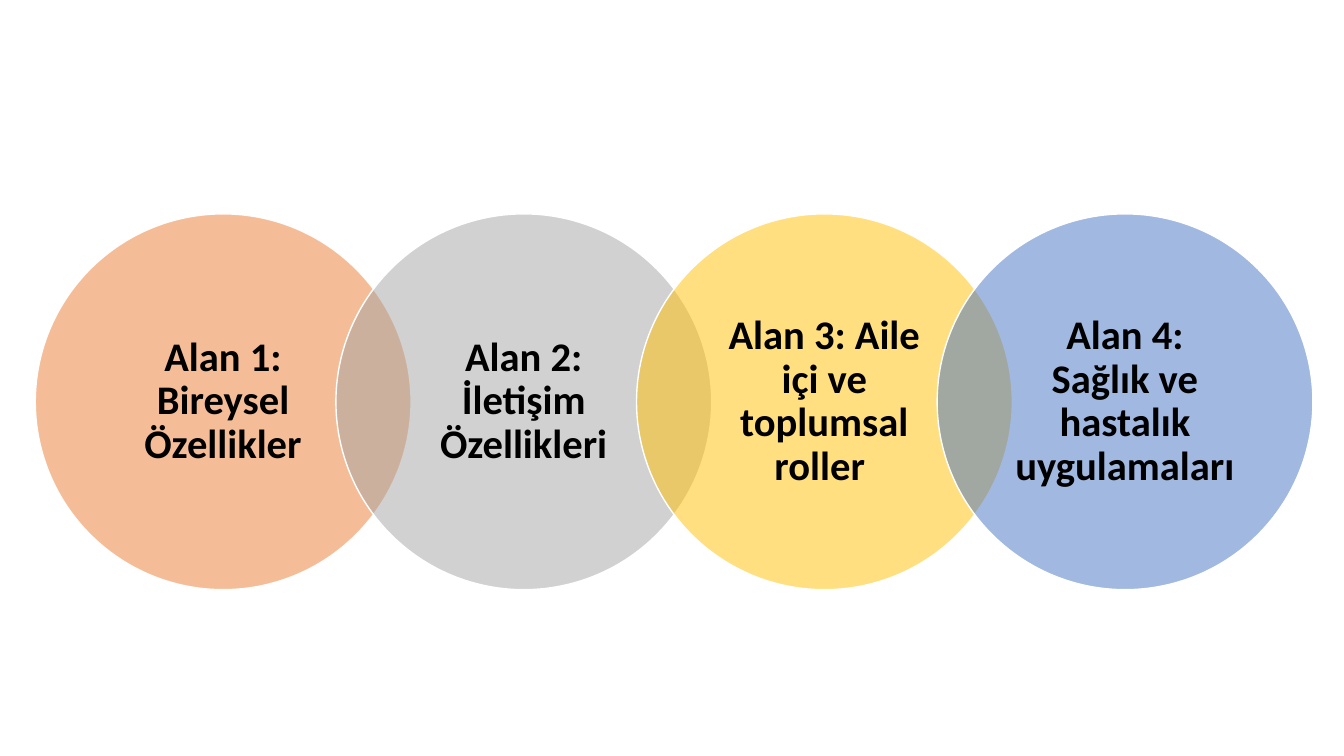
from dataclasses import dataclass

from lxml.etree import SubElement
from pptx import Presentation
from pptx.dml.color import RGBColor as Rgb
from pptx.enum.shapes import MSO_SHAPE as Shape
from pptx.enum.text import MSO_ANCHOR as Anchor, PP_ALIGN as Align
from pptx.oxml.ns import qn
from pptx.util import Cm, Pt

AREAS = [
    ("Alan 1: Bireysel Özellikler", "ED7D31"),
    ("Alan 2: İletişim Özellikleri", "A5A5A5"),
    ("Alan 3: Aile içi ve toplumsal roller ", "FFC000"),
    ("Alan 4: Sağlık ve hastalık uygulamaları ", "4472C4"),
]


@dataclass(frozen=True)
class Theme:
    font: str = "Calibri"
    size: int = 29
    text: str = "000000"
    outline: str = "FFFFFF"
    outline_width: int = 1
    opacity: int = 50


THEME = Theme()
SLIDE_WIDTH, SLIDE_HEIGHT = 33.87, 19.05
DIAMETER = 9.47
LEFT, TOP = 0.89, 5.39
STEP = DIAMETER * 0.8
SIDE_INSET, END_INSET = 0.53, 0.1


def set_opacity(shape, percent):
    color = shape.fill._xPr.find(qn("a:solidFill"))[0]
    SubElement(color, qn("a:alpha")).set("val", str(percent * 1000))


def add_circle(page, left, label, color):
    circle = page.shapes.add_shape(
        Shape.OVAL, Cm(left), Cm(TOP), Cm(DIAMETER), Cm(DIAMETER))
    circle.shadow.inherit = False
    circle.fill.solid()
    circle.fill.fore_color.rgb = Rgb.from_string(color)
    set_opacity(circle, THEME.opacity)
    circle.line.color.rgb = Rgb.from_string(THEME.outline)
    circle.line.width = Pt(THEME.outline_width)

    frame = circle.text_frame
    frame.word_wrap = True
    frame.vertical_anchor = Anchor.MIDDLE
    frame.margin_left = frame.margin_right = Cm(SIDE_INSET)
    frame.margin_top = frame.margin_bottom = Cm(END_INSET)
    para = frame.paragraphs[0]
    para.alignment = Align.CENTER
    para.line_spacing = 0.9
    span = para.add_run()
    span.text = label
    span.font.name = THEME.font
    span.font.size = Pt(THEME.size)
    span.font.bold = True
    span.font.color.rgb = Rgb.from_string(THEME.text)


def main():
    deck = Presentation()
    deck.slide_width, deck.slide_height = Cm(SLIDE_WIDTH), Cm(SLIDE_HEIGHT)
    page = deck.slides.add_slide(deck.slide_layouts[6])
    for index, (label, color) in enumerate(AREAS):
        add_circle(page, LEFT + index * STEP, label, color)
    deck.save("out.pptx")


if __name__ == "__main__":
    main()
